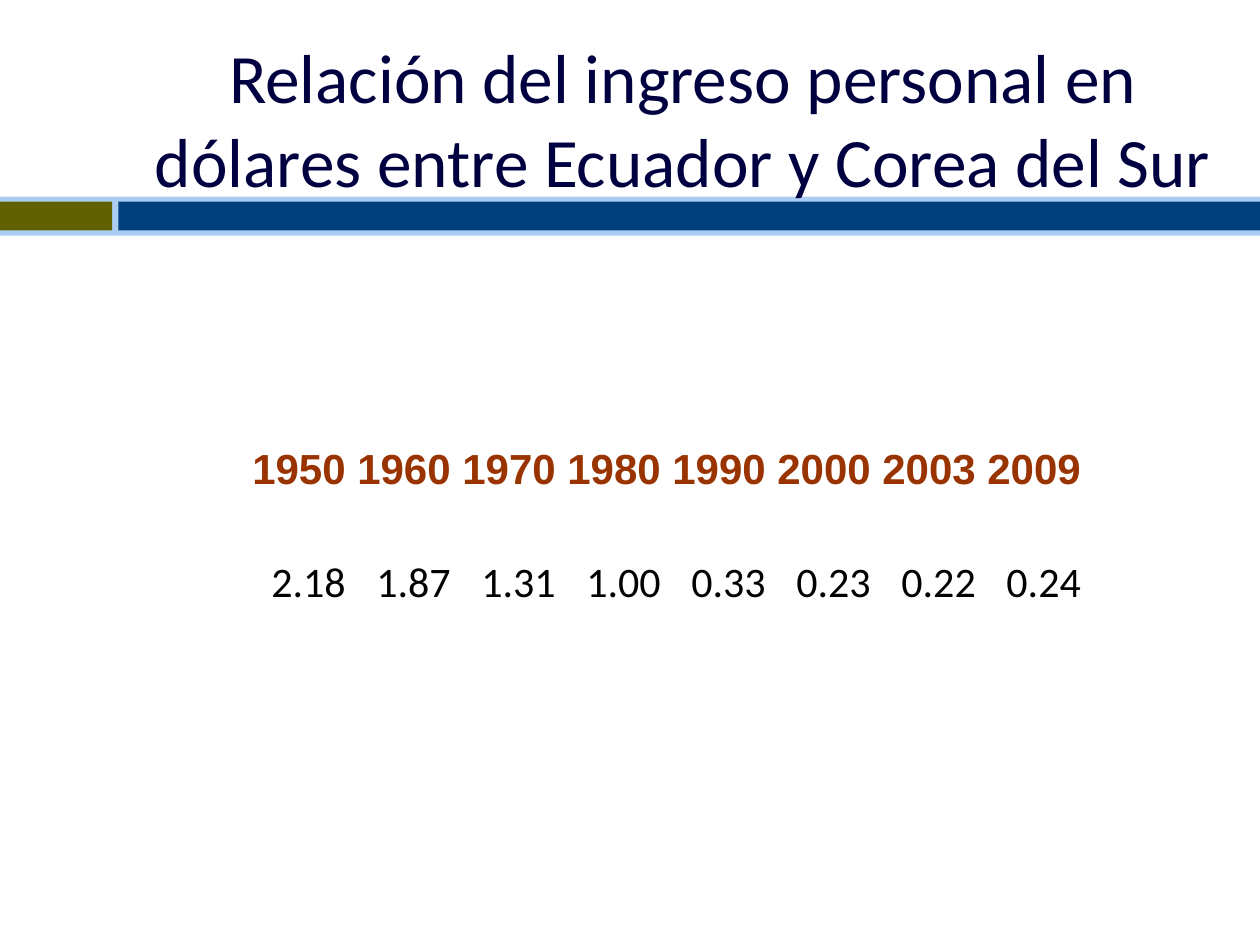
from pptx import Presentation
from pptx.dml.color import RGBColor
from pptx.enum.shapes import MSO_SHAPE
from pptx.enum.text import MSO_ANCHOR, MSO_AUTO_SIZE, PP_ALIGN
from pptx.util import Inches, Pt

RECTANGLE = MSO_SHAPE.RECTANGLE
MIDDLE, BOTTOM = MSO_ANCHOR.MIDDLE, MSO_ANCHOR.BOTTOM
CENTER, RIGHT = PP_ALIGN.CENTER, PP_ALIGN.RIGHT

TITLE = "Relación del ingreso personal en dólares entre Ecuador y Corea del Sur"
INCOME_RATIOS = {
    "1950": "2.18", "1960": "1.87", "1970": "1.31", "1980": "1.00",
    "1990": "0.33", "2000": "0.23", "2003": "0.22", "2009": "0.24",
}
TITLE_FORMAT = {"name": "Calibri", "size": Pt(39.6), "bold": False}
YEAR_FORMAT = {"name": "Arial", "size": Pt(24), "bold": True}
RATIO_FORMAT = {"name": "Calibri", "size": Pt(24), "bold": False}
CELL_FORMAT = {
    "vertical_anchor": BOTTOM,
    "margin_left": Inches(0.01), "margin_right": Inches(0.01),
    "margin_top": Inches(0.01), "margin_bottom": 0,
}


def colour(hex_value):
    return RGBColor.from_string(hex_value)


def set_attributes(target, values):
    for name, value in values.items():
        setattr(target, name, value)


def format_paragraph(paragraph, alignment, font_format, hex_value):
    paragraph.alignment = alignment
    set_attributes(paragraph.font, font_format)
    paragraph.font.color.rgb = colour(hex_value)


def add_bar(slide, box, hex_value):
    shape = slide.shapes.add_shape(RECTANGLE, *map(Inches, box))
    shape.shadow.inherit = False
    shape.fill.solid()
    shape.fill.fore_color.rgb = colour(hex_value)
    shape.line.fill.background()


def add_divider(slide, box):
    """Draw a pale band holding a short olive bar and a long blue one."""
    left, top, width, height = box
    edge, gap, short = 0.04, 0.05, 0.89
    bar_top, bar_height = top + edge, height - 2 * edge
    long_left = left + short + gap
    add_bar(slide, box, "ABCDF4")
    add_bar(slide, (left, bar_top, short, bar_height), "606000")
    add_bar(slide, (long_left, bar_top, left + width - long_left, bar_height), "003F7E")


def place_title(slide, box):
    """Fill the title placeholder and bring it in front of the divider."""
    title = slide.shapes.title
    title.left, title.top, title.width, title.height = map(Inches, box)
    frame = title.text_frame
    frame.text = TITLE
    frame.word_wrap = True
    frame.auto_size = MSO_AUTO_SIZE.NONE
    frame.vertical_anchor = MIDDLE
    format_paragraph(frame.paragraphs[0], CENTER, TITLE_FORMAT, "000040")
    title.element.getparent().append(title.element)


def add_ratio_table(slide, box):
    rows = [
        (INCOME_RATIOS.keys(), YEAR_FORMAT, "993300"),
        (INCOME_RATIOS.values(), RATIO_FORMAT, "000000"),
    ]
    table = slide.shapes.add_table(len(rows), len(INCOME_RATIOS), *map(Inches, box)).table
    table.first_row = table.horz_banding = False
    for row, (texts, font_format, hex_value) in enumerate(rows):
        for column, text in enumerate(texts):
            cell = table.cell(row, column)
            cell.text = text
            cell.fill.background()
            set_attributes(cell, CELL_FORMAT)
            format_paragraph(cell.text_frame.paragraphs[0], RIGHT, font_format, hex_value)


def main():
    presentation = Presentation()
    presentation.slide_width, presentation.slide_height = Inches(10), Inches(7.5)
    slide = presentation.slides.add_slide(presentation.slide_layouts.get_by_name("Title Only"))
    add_divider(slide, (0, 1.56, 10, 0.31))
    place_title(slide, (0.92, 0.31, 9, 1.25))
    add_ratio_table(slide, (1.92, 3, 6.67, 1.83))
    presentation.save("out.pptx")


if __name__ == "__main__":
    main()
